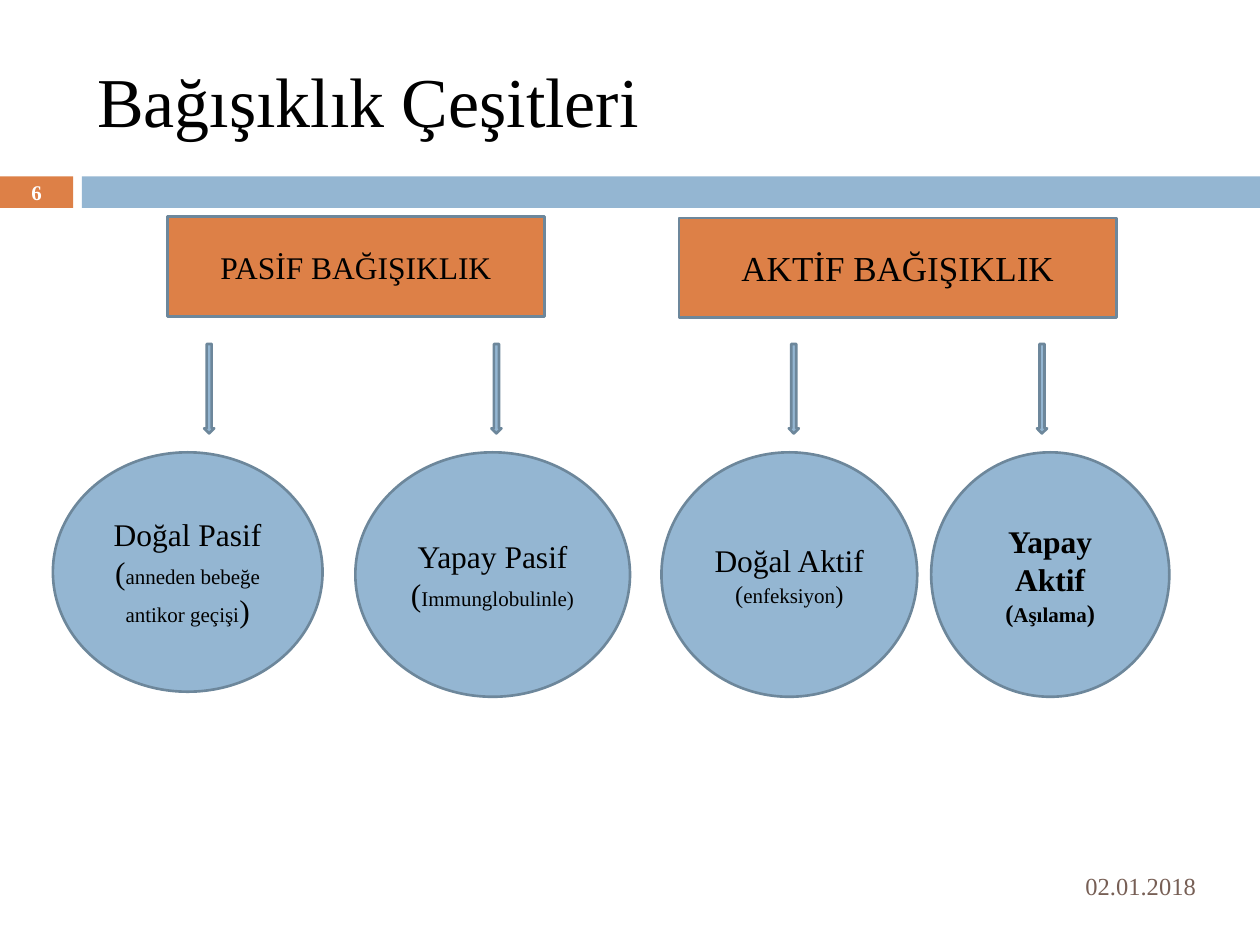
import pptx
import pptx.util
import pptx.dml.color
import pptx.enum.shapes
import pptx.enum.text

Inches = pptx.util.Inches
SHAPE = pptx.enum.shapes.MSO_SHAPE
ALIGN = pptx.enum.text.PP_ALIGN
ORANGE, BLUE, OUTLINE = "DD8047", "94B6D2", "6D879B"


def paint(target, color):
    if hasattr(target, "solid"):
        target.solid()
        target.fore_color.rgb = pptx.dml.color.RGBColor.from_string(color)
    else:
        target.color.rgb = pptx.dml.color.RGBColor.from_string(color)


def write(box, lines, color="000000", align=ALIGN.CENTER, bold=False):
    frame = box.text_frame
    frame.word_wrap = True
    frame.vertical_anchor = pptx.enum.text.MSO_ANCHOR.MIDDLE
    for index, line in enumerate(lines):
        para = frame.add_paragraph() if index else frame.paragraphs[0]
        para.alignment = align
        for text, size in line:
            span = para.add_run()
            span.text = text
            span.font.name = "Times New Roman"
            span.font.size = pptx.util.Pt(size)
            span.font.bold = bold
            paint(span.font, color)


deck = pptx.Presentation()
deck.slide_width, deck.slide_height = Inches(10), Inches(7.5)
page = deck.slides.add_slide(deck.slide_layouts[5])
shapes = page.shapes

title = shapes.title
title.left, title.top = Inches(0.67), Inches(0.25)
title.width, title.height = Inches(8.92), Inches(1.08)
write(title, [[("Bağışıklık Çeşitleri", 40)]], align=ALIGN.LEFT)

for left, width, color in [(0, 0.58, ORANGE), (0.65, 9.35, BLUE)]:
    band = shapes.add_shape(SHAPE.RECTANGLE, Inches(left), Inches(1.4), Inches(width), Inches(0.25))
    band.shadow.inherit = False
    paint(band.fill, color)
    band.line.fill.background()

number = shapes.add_textbox(Inches(0), Inches(1.39), Inches(0.58), Inches(0.27))
write(number, [[("6", 11.9)]], color="FFFFFF", bold=True)

headings = [
    (1.33, 1.72, 2.99, "PASİF BAĞIŞIKLIK", 18),
    (5.39, 1.73, 3.47, "AKTİF BAĞIŞIKLIK", 20),
]
kinds = [
    (0.42, 2.14, 1.9, "Doğal Pasif", [("(", 18), ("anneden bebeğe antikor geçişi", 12), (")", 18)], False),
    (2.82, 2.18, 1.94, "Yapay Pasif", [("(", 18), ("Immunglobulinle)", 12)], False),
    (5.25, 2.03, 1.94, "Doğal Aktif", [("(", 14), ("enfeksiyon", 12), (")", 14)], False),
    (7.39, 1.89, 1.94, "Yapay Aktif", [("(", 14), ("Aşılama", 12), (")", 14)], True),
]
diagram = [
    (SHAPE.RECTANGLE, left, top, width, 0.79, ORANGE, [[(text, size)]], False)
    for left, top, width, text, size in headings
]
diagram += [
    (SHAPE.DOWN_ARROW, left, 2.73, 0.08, 0.71, BLUE, [], False)
    for left in (1.62, 3.9, 6.26, 8.23)
]
diagram += [
    (SHAPE.OVAL, left, 3.59, width, height, BLUE, [[(name, 18)], detail], bold)
    for left, width, height, name, detail, bold in kinds
]
for preset, left, top, width, height, color, lines, bold in diagram:
    box = shapes.add_shape(preset, Inches(left), Inches(top), Inches(width), Inches(height))
    box.shadow.inherit = False
    paint(box.fill, color)
    paint(box.line, OUTLINE)
    box.line.width = pptx.util.Pt(1.5)
    write(box, lines, bold=bold)

date = shapes.add_textbox(Inches(6.67), Inches(6.83), Inches(2.92), Inches(0.4))
write(date, [[("02.01.2018", 14)]], color="775F55", align=ALIGN.RIGHT)

deck.save("out.pptx")
